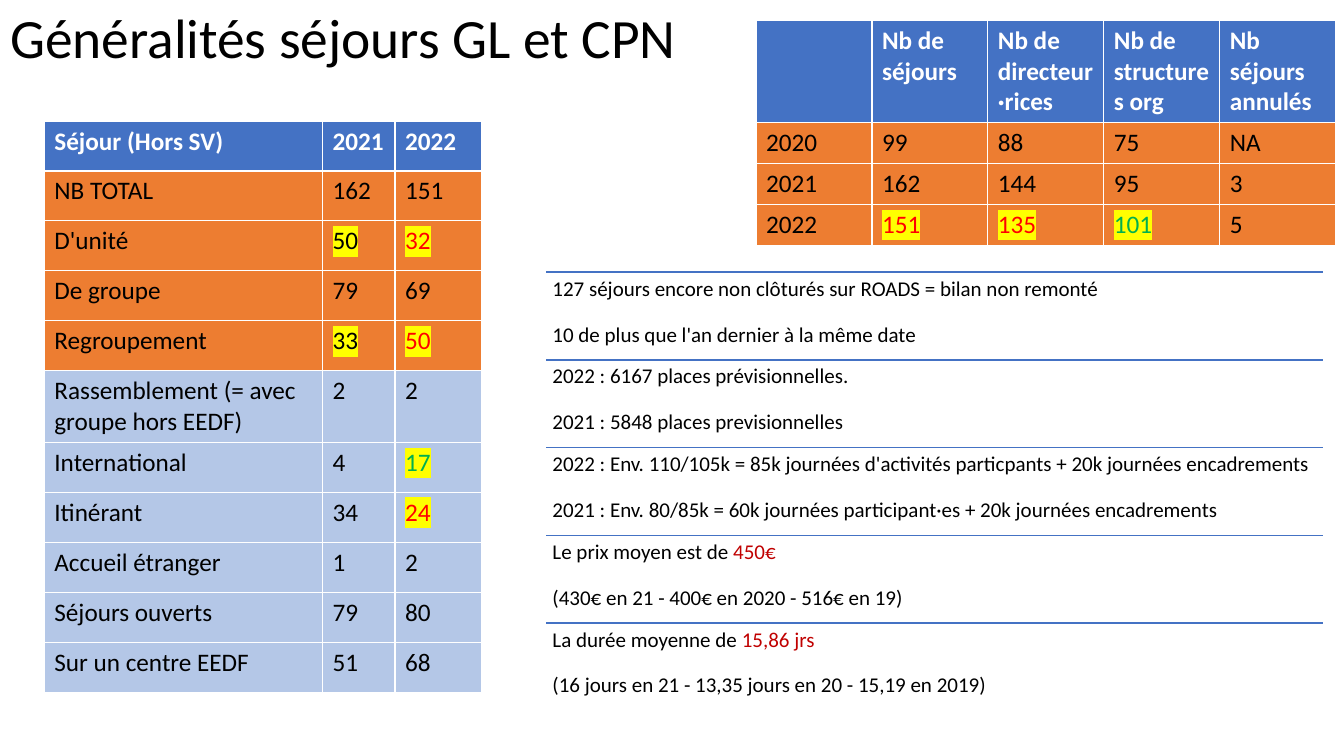
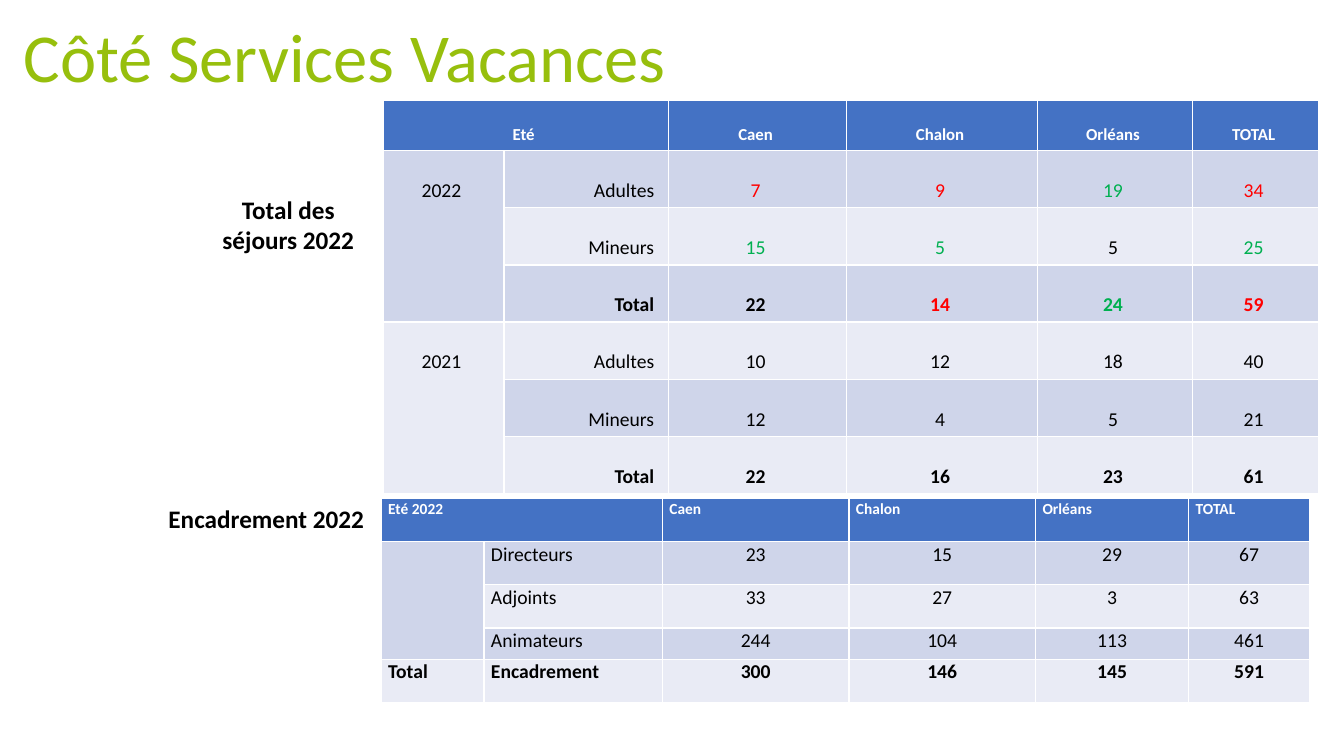
from lxml import etree
from pptx import Presentation
from pptx.dml.color import RGBColor
from pptx.enum.shapes import MSO_CONNECTOR
from pptx.enum.text import MSO_ANCHOR, MSO_AUTO_SIZE, PP_ALIGN
from pptx.oxml.ns import qn
from pptx.util import Inches, Pt

LINE = MSO_CONNECTOR.STRAIGHT
MIDDLE = MSO_ANCHOR.MIDDLE
NO_FIT = MSO_AUTO_SIZE.NONE
ALIGN = {"l": PP_ALIGN.LEFT, "c": PP_ALIGN.CENTER, "r": PP_ALIGN.RIGHT}

FONT = "Calibri"
WIDE, HIGH = Inches(13.33), Inches(7.5)
TITLE_ONLY = 5
COLORS = {
    "black": "000000", "white": "FFFFFF", "blue": "4472C4",
    "orange": "ED7D31", "sky": "B4C7E7", "dark": "CFD5EA",
    "light": "E9EBF5", "red": "FF0000", "green": "00B050",
    "yellow": "FFFF00", "brick": "C00000", "lime": "97BF0D",
}
# Letters after "|" in a table cell: text colour; "h" adds a highlight
MARKS = {"r": "red", "g": "green"}


def color(name):
    return RGBColor.from_string(COLORS[name])


class Deck:
    """Holds the style and the current slide; lengths are % of the slide."""

    def __init__(self):
        self.prs = Presentation()
        self.prs.slide_width, self.prs.slide_height = WIDE, HIGH
        self.slide = None

    def x(self, share):
        return round(WIDE * share / 100)

    def y(self, share):
        return round(HIGH * share / 100)

    def box(self, x, y, w, h):
        return self.x(x), self.y(y), self.x(w), self.y(h)

    def style(self, run, size, tint="black", bold=False, glow=False):
        font = run.font
        font.name, font.size, font.bold = FONT, Pt(size), bold
        font.color.rgb = color(tint)
        if glow:
            mark = etree.Element(qn("a:highlight"))
            etree.SubElement(mark, qn("a:srgbClr"), val=COLORS["yellow"])
            run._r.rPr.find(qn("a:solidFill")).addnext(mark)

    def title(self, text, place, size, tint="black"):
        layout = self.prs.slide_layouts[TITLE_ONLY]
        self.slide = self.prs.slides.add_slide(layout)
        shape = self.slide.shapes.title
        shape.left, shape.top, shape.width, shape.height = self.box(*place)
        frame = shape.text_frame
        frame.text = text
        frame.auto_size, frame.vertical_anchor = NO_FIT, MIDDLE
        par = frame.paragraphs[0]
        par.alignment, par.line_spacing = ALIGN["l"], 0.9
        self.style(par.runs[0], size, tint)

    def label(self, text, place, side):
        frame = self.slide.shapes.add_textbox(*self.box(*place)).text_frame
        frame.word_wrap = True
        frame.text = text
        par = frame.paragraphs[0]
        par.alignment = ALIGN[side]
        self.style(par.runs[0], 18, bold=True)

    def rule(self, x, y, w):
        line = self.slide.shapes.add_connector(
            LINE, self.x(x), self.y(y), self.x(x + w), self.y(y))
        line.line.color.rgb, line.line.width = color("blue"), Pt(1)
        etree.SubElement(line._element.spPr, qn("a:effectLst"))

    def note(self, lines, x, y, w, h):
        """A ruled block of lines; text after "|" is set in brick red."""
        self.rule(x, y, w)
        frame = self.slide.shapes.add_textbox(*self.box(x, y, w, h)).text_frame
        frame.word_wrap = True
        frame.margin_left = frame.margin_right = Inches(0.06)
        frame.margin_top = frame.margin_bottom = Inches(0.06)
        for i, text in enumerate(lines):
            par = frame.add_paragraph() if i else frame.paragraphs[0]
            par.line_spacing = 0.9
            if i:
                par.space_before = Pt(16.5)
            for part, tint in zip(text.split("|"), ("black", "brick")):
                run = par.add_run()
                run.text = part
                self.style(run, 15, tint)

    def table(self, data, x, y, cols, rows, fills, sizes=(18, 18),
              sides=("lllll", "lllll"), pads=None, bold=(), spans=()):
        """sizes, sides and pads each hold a head value and a body value."""
        shape = self.slide.shapes.add_table(
            len(rows), len(cols), *self.box(x, y, sum(cols), sum(rows)))
        grid = shape.table
        grid.horz_banding = False
        for col, w in zip(grid.columns, cols):
            col.width = self.x(w)
        for row, h in zip(grid.rows, rows):
            row.height = self.y(h)
        for top, left, low, right in spans:
            grid.cell(top, left).merge(grid.cell(low, right))
        for r, texts in enumerate(data):
            body = int(r > 0)
            for c, entry in enumerate(texts):
                cell = grid.cell(r, c)
                cell.fill.solid()
                cell.fill.fore_color.rgb = color(fills[r])
                if pads:
                    (cell.margin_left, cell.margin_top, cell.margin_right,
                     cell.margin_bottom) = map(Inches, pads[body])
                text, _, marks = entry.partition("|")
                if not text:
                    continue
                cell.text_frame.text = text
                par = cell.text_frame.paragraphs[0]
                par.alignment = ALIGN[sides[body][c]]
                tint = MARKS.get(marks[:1], "black" if body else "white")
                self.style(par.runs[0], sizes[body], tint,
                           not body or r in bold, "h" in marks)


# Slide 1: overview of the stays
STAYS = [
    ["Séjour (Hors SV)", "2021", "2022"],
    ["NB TOTAL", "162", "151"],
    ["D'unité", "50|h", "32|rh"],
    ["De groupe", "79", "69"],
    ["Regroupement", "33|h", "50|rh"],
    ["Rassemblement (= avec groupe hors EEDF)", "2", "2"],
    ["International", "4", "17|gh"],
    ["Itinérant", "34", "24|rh"],
    ["Accueil étranger", "1", "2"],
    ["Séjours ouverts", "79", "80"],
    ["Sur un centre EEDF", "51", "68"],
]
YEARS = [
    ["", "Nb de séjours", "Nb de directeur·rices", "Nb de structures org",
     "Nb séjours annulés"],
    ["2020", "99", "88", "75", "NA"],
    ["2021", "162", "144", "95", "3"],
    ["2022", "151|rh", "135|rh", "101|gh", "5"],
]
NOTES = [
    ["127 séjours encore non clôturés sur ROADS = bilan non remonté",
     "10 de plus que l'an dernier à la même date"],
    ["2022 : 6167 places prévisionnelles.",
     "2021 : 5848 places previsionnelles"],
    ["2022 : Env. 110/105k = 85k journées d'activités particpants"
     " + 20k journées encadrements",
     "2021 : Env. 80/85k = 60k journées participant·es"
     " + 20k journées encadrements"],
    ["Le prix moyen est de |450€",
     "(430€ en 21 - 400€ en 2020 - 516€ en 19)"],
    ["La durée moyenne de |15,86 jrs",
     "(16 jours en 21 - 13,35 jours en 20 - 15,19 en 2019)"],
]

# Slide 2: holiday services
SITES = ["Caen", "Chalon", "Orléans", "TOTAL"]
TOTALS = [
    ["Eté", "", *SITES],
    ["2022", "Adultes", "7|r", "9|r", "19|g", "34|r"],
    ["", "Mineurs", "15|g", "5|g", "5", "25|g"],
    ["", "Total", "22", "14|r", "24|g", "59|r"],
    ["2021", "Adultes", "10", "12", "18", "40"],
    ["", "Mineurs", "12", "4", "5", "21"],
    ["", "Total", "22", "16", "23", "61"],
]
STAFF = [
    ["Eté 2022", "", *SITES],
    ["", "Directeurs", "23", "15", "29", "67"],
    ["", "Adjoints", "33", "27", "3", "63"],
    ["", "Animateurs", "244", "104", "113", "461"],
    ["Total", "Encadrement", "300", "146", "145", "591"],
]


def main():
    deck = Deck()

    deck.title("Généralités séjours GL et CPN", (0, -0.8, 53.6, 12.3), 39.6)
    deck.table(STAYS, 3.3, 16, [20.7, 5.4, 6.45],
               [6.61] * 5 + [9.4] + [6.61] * 5,
               ["blue"] + ["orange"] * 4 + ["sky"] * 6)
    deck.table(YEARS, 56.25, 2.7, [8.63] * 5, [13.5] + [5.4] * 3,
               ["blue"] + ["orange"] * 3)
    step = 11.6
    for i, lines in enumerate(NOTES):
        deck.note(lines, 40.66, 36 + i * step, 57.76, step)

    deck.title("Côté Services Vacances", (1, 1.6, 49.5, 12.8), 49, "lime")
    bands = ["blue"] + ["dark", "light"] * 3
    pad = (0.07, 0.01, 0.07, 0.05)
    deck.table(STAFF, 28.36, 65.9, [7.65, 13.28, 13.88, 13.88, 11.4, 9],
               [5.73] * 3 + [4.13, 5.73], bands, (11, 14),
               ("llllll", "llcccc"), (pad, pad), {4},
               [(0, 0, 0, 1), (1, 0, 3, 0)])
    deck.label("Total des séjours 2022", (15.7, 25, 11.5, 9.5), "c")
    deck.label("Encadrement 2022", (11.8, 65.9, 16.6, 5.3), "l")
    deck.table(TOTALS, 28.5, 13.33, [9, 12.23, 13.28, 14.18, 11.55, 9.38],
               [6.6] + [7.56] * 6, bands, (12, 14), ("cccccc", "crcccc"),
               ((0.1, 0.24, 0.14, 0.05), (0.1, 0.28, 0.14, 0.05)), {3, 6},
               [(0, 0, 0, 1), (1, 0, 3, 0), (4, 0, 6, 0)])

    deck.prs.save("out.pptx")


if __name__ == "__main__":
    main()
